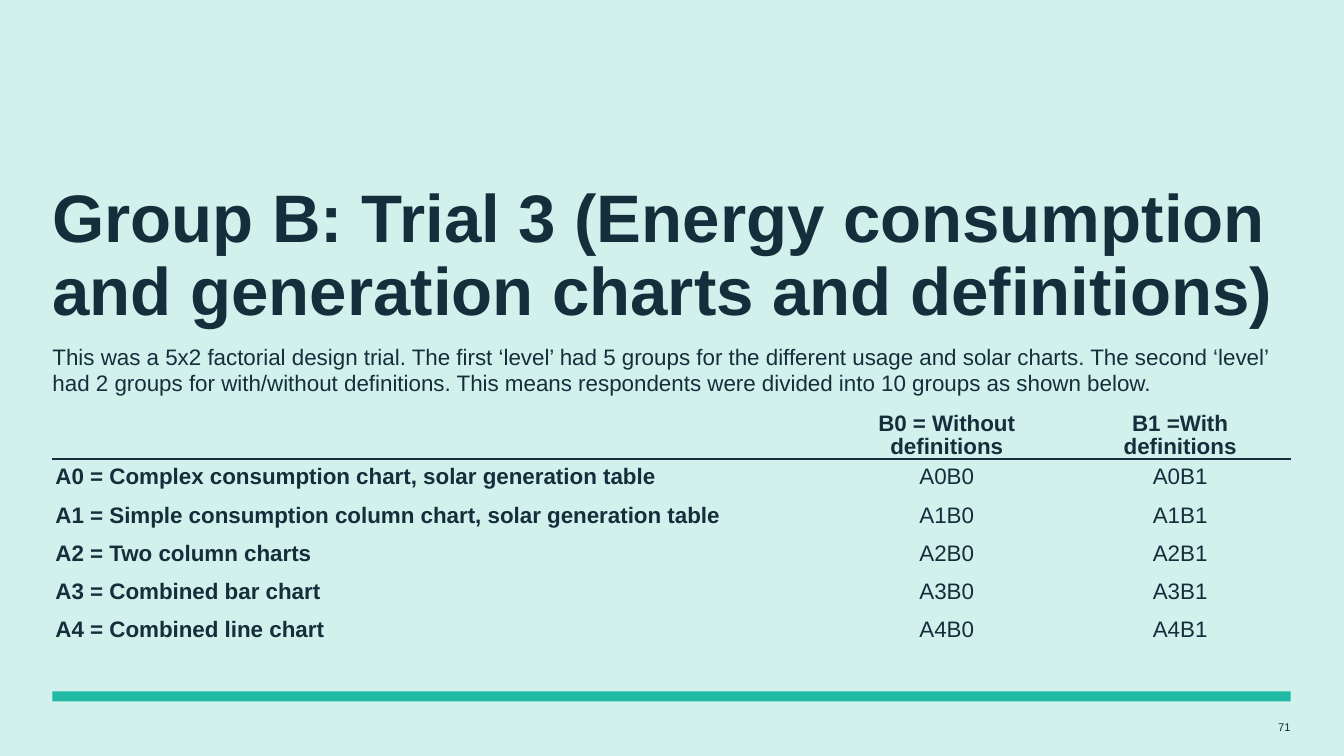
from dataclasses import dataclass
from typing import Any

from lxml import etree
from pptx import Presentation
from pptx import util as u
from pptx.dml import color
from pptx.enum import shapes, text
from pptx.oxml import ns

COLOURS = {"ink": "142E3B", "teal": "20B9A3", "pale": "D2F1ED"}
FONT = "Arial"
LEFT, WIDTH = 0.52, 12.28
NO_GRID_STYLE = "{2D5ABB26-0587-4C30-8999-92F81FD0307C}"
COLUMN_WIDTHS = (7.65, 2.44, 2.19)
HEADER_HEIGHT, ROW_HEIGHT = 0.44, 0.38
HEADINGS = ("", "B0 = Without definitions", "B1 =With definitions")
CHART_GROUPS = (
    "Complex consumption chart, solar generation table",
    "Simple consumption column chart, solar generation table",
    "Two column charts",
    "Combined bar chart",
    "Combined line chart",
)


@dataclass(frozen=True)
class TextStyle:
    size: float
    bold: bool = False
    align: Any = text.PP_ALIGN.LEFT
    line_spacing: Any = 1.0


TITLE = TextStyle(48, bold=True, line_spacing=0.9)
INTRO = TextStyle(16)
PAGE_NUMBER = TextStyle(8, align=text.PP_ALIGN.RIGHT)
ROW_LABEL = TextStyle(16, bold=True, line_spacing=u.Pt(16))
HEADING = TextStyle(16, True, text.PP_ALIGN.CENTER, u.Pt(16))
GROUP_CODE = TextStyle(16, False, text.PP_ALIGN.CENTER, u.Pt(16))


def rgb(name: str) -> color.RGBColor:
    return color.RGBColor.from_string(COLOURS[name])


def write(frame: Any, wording: str, style: TextStyle) -> None:
    frame.text = wording
    para = frame.paragraphs[0]
    para.alignment = style.align
    para.line_spacing = style.line_spacing
    para.space_before = u.Pt(0)
    for span in para.runs:
        span.font.name = FONT
        span.font.size = u.Pt(style.size)
        span.font.bold = style.bold
        span.font.color.rgb = rgb("ink")


def fill_box(box: Any, top: float, height: float, wording: str,
             style: TextStyle, anchor: Any) -> None:
    """Place a text shape across the content width and set its text."""
    box.left, box.top = u.Inches(LEFT), u.Inches(top)
    box.width, box.height = u.Inches(WIDTH), u.Inches(height)
    frame = box.text_frame
    frame.margin_left = frame.margin_right = 0
    frame.margin_top = frame.margin_bottom = 0
    frame.word_wrap = True
    frame.auto_size = text.MSO_AUTO_SIZE.NONE
    frame.vertical_anchor = anchor
    write(frame, wording, style)


def remove_bullet(para: Any) -> None:
    properties = para._p.get_or_add_pPr()
    properties.set("marL", "0")
    properties.set("indent", "0")
    etree.SubElement(properties, ns.qn("a:buNone"))


def add_bottom_rule(cell: Any) -> None:
    line = etree.SubElement(cell._tc.get_or_add_tcPr(), ns.qn("a:lnB"),
                            w=str(u.Pt(2.25)))
    fill = etree.SubElement(line, ns.qn("a:solidFill"))
    etree.SubElement(fill, ns.qn("a:srgbClr"), val=COLOURS["ink"])


def add_group_table(page: Any) -> None:
    rows = [HEADINGS] + [
        (f"A{i} = {name}", f"A{i}B0", f"A{i}B1")
        for i, name in enumerate(CHART_GROUPS)
    ]
    height = HEADER_HEIGHT + ROW_HEIGHT * len(CHART_GROUPS)
    table = page.shapes.add_table(
        len(rows), len(HEADINGS), u.Inches(LEFT), u.Inches(4.11),
        u.Inches(WIDTH), u.Inches(height)).table
    table.horz_banding = False
    table._tbl.tblPr.find(ns.qn("a:tableStyleId")).text = NO_GRID_STYLE
    for column, width in zip(table.columns, COLUMN_WIDTHS):
        column.width = u.Inches(width)
    for r, values in enumerate(rows):
        table.rows[r].height = u.Inches(ROW_HEIGHT if r else HEADER_HEIGHT)
        for c, value in enumerate(values):
            cell = table.cell(r, c)
            cell.margin_left = cell.margin_right = u.Inches(0.03)
            cell.margin_top = cell.margin_bottom = 0
            cell.vertical_anchor = (text.MSO_ANCHOR.MIDDLE if r
                                    else text.MSO_ANCHOR.TOP)
            if r == 0:
                add_bottom_rule(cell)
            cell.fill.background()
            style = HEADING if r == 0 else GROUP_CODE if c else ROW_LABEL
            write(cell.text_frame, value, style)


def main() -> None:
    deck = Presentation()
    deck.slide_width, deck.slide_height = u.Inches(13.33), u.Inches(7.5)
    page = deck.slides.add_slide(deck.slide_layouts[1])
    page.background.fill.solid()
    page.background.fill.fore_color.rgb = rgb("pale")

    bar = page.shapes.add_shape(
        shapes.MSO_SHAPE.RECTANGLE, u.Inches(LEFT), u.Inches(6.86),
        u.Inches(WIDTH), u.Inches(0.1))
    bar.shadow.inherit = False
    bar.fill.solid()
    bar.fill.fore_color.rgb = rgb("teal")
    bar.line.fill.background()

    number = page.shapes.add_textbox(0, 0, 0, 0)
    fill_box(number, 7.15, 0.13, "71", PAGE_NUMBER, text.MSO_ANCHOR.BOTTOM)

    add_group_table(page)

    intro = page.placeholders[1]
    fill_box(intro, 3.4, 0.54,
             "This was a 5x2 factorial design trial. The first ‘level’ had "
             "5 groups for the different usage and solar charts. The second "
             "‘level’ had 2 groups for with/without definitions. This means "
             "respondents were divided into 10 groups as shown below.",
             INTRO, text.MSO_ANCHOR.TOP)
    remove_bullet(intro.text_frame.paragraphs[0])
    fill_box(page.shapes.title, 1.83, 1.45,
             "Group B: Trial 3 (Energy consumption and generation charts "
             "and definitions)", TITLE, text.MSO_ANCHOR.TOP)

    deck.save("out.pptx")


if __name__ == "__main__":
    main()
